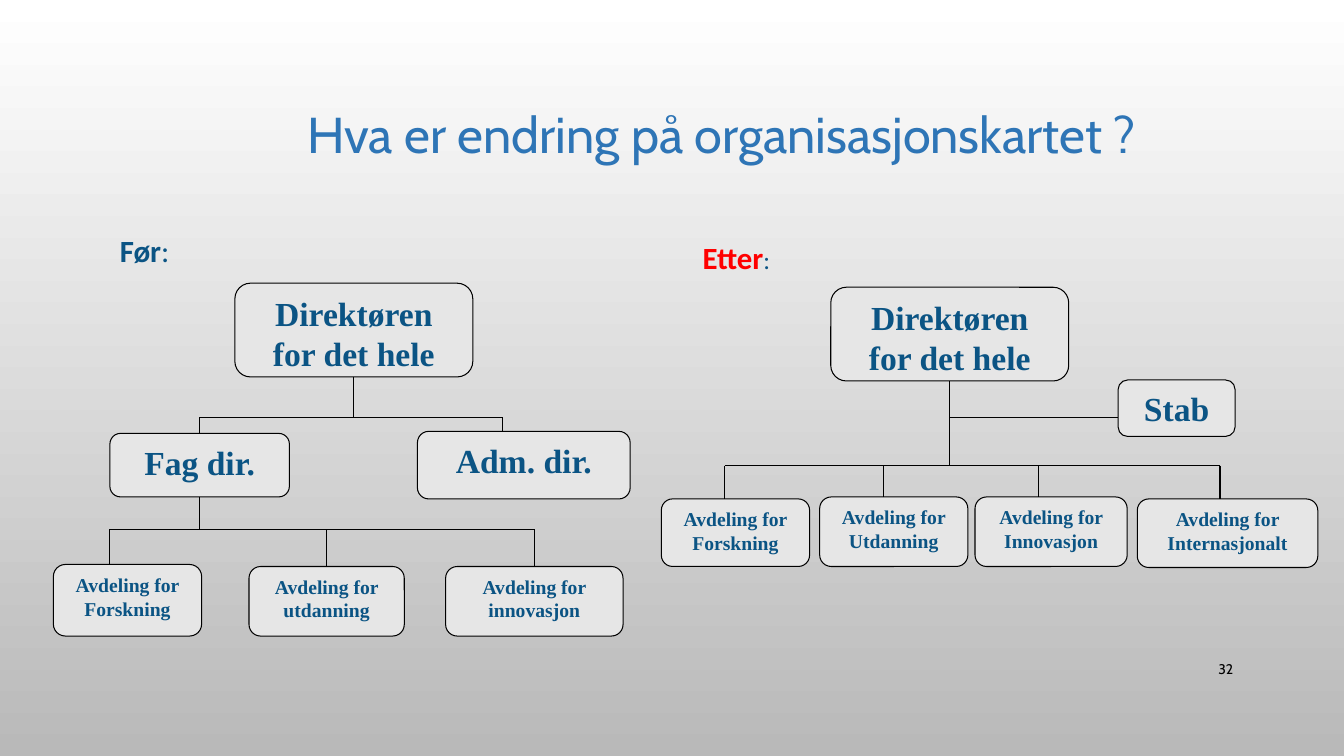
"""Build a slide that compares an organisation chart before and after a change."""
from lxml import etree
from pptx import Presentation
from pptx import util as u
from pptx.dml.color import RGBColor
from pptx.enum import shapes, text
from pptx.oxml.ns import qn

WHITE = RGBColor(0xFF, 0xFF, 0xFF)
GREY = RGBColor(0xB9, 0xB9, 0xB9)
BOX_GREY = RGBColor(0xE6, 0xE6, 0xE6)
BLACK = RGBColor(0, 0, 0)
TITLE_BLUE = RGBColor(0x2E, 0x75, 0xB6)
NAVY = RGBColor(0x0B, 0x54, 0x84)
RED = RGBColor(0xFF, 0, 0)
LEFT, CENTER, RIGHT = text.PP_ALIGN.LEFT, text.PP_ALIGN.CENTER, text.PP_ALIGN.RIGHT
TOP, MIDDLE = text.MSO_ANCHOR.TOP, text.MSO_ANCHOR.MIDDLE
TOP_SIDE, BOTTOM_SIDE = 0, 2

deck = Presentation()
deck.slide_width, deck.slide_height = u.Inches(13.33), u.Inches(7.5)
page = deck.slides.add_slide(deck.slide_layouts[6])
backdrop = page.background.fill
backdrop.gradient()
backdrop.gradient_angle = 270
for stop, colour, position in zip(backdrop.gradient_stops, (WHITE, GREY), (0, 1)):
    stop.color.rgb = colour
    stop.position = position


def write(box, paragraphs, align, anchor=TOP, wrap=True):
    """Fill a box with paragraphs of (words, size, font, colour, bold) runs."""
    frame = box.text_frame
    frame.word_wrap = wrap
    frame.vertical_anchor = anchor
    for index, runs in enumerate(paragraphs):
        para = frame.add_paragraph() if index else frame.paragraphs[0]
        para.alignment = align
        for words, size, font, colour, bold in runs:
            span = para.add_run()
            span.text = words
            span.font.size = u.Pt(size)
            span.font.name = font
            span.font.color.rgb = colour
            span.font.bold = bold


def connect(x1, y1, x2, y2):
    """Draw a thin black line and return it."""
    line = page.shapes.add_connector(
        shapes.MSO_CONNECTOR.STRAIGHT, *map(u.Inches, (x1, y1, x2, y2)))
    line.line.color.rgb = BLACK
    line.line.width = u.Pt(0.75)
    etree.SubElement(line._element.spPr, qn("a:effectLst"))
    return line


director = ["Direktøren", "for det hele"]
units = [
    ("director before", 2.33, 2.81, 2.36, 0.93, 24, director),
    ("professional", 1.09, 4.3, 1.78, 0.63, 24, ["Fag dir."]),
    ("administrative", 4.14, 4.28, 2.11, 0.67, 24, ["Adm. dir."]),
    ("research before", 0.53, 5.6, 1.47, 0.71, 14, ["Avdeling for Forskning"]),
    ("education before", 2.47, 5.62, 1.54, 0.69, 14, ["Avdeling for utdanning"]),
    ("innovation before", 4.42, 5.62, 1.76, 0.69, 14, ["Avdeling for innovasjon"]),
    ("director after", 8.24, 2.85, 2.36, 0.93, 24, director),
    ("staff", 11.09, 3.77, 1.16, 0.56, 24, ["Stab"]),
    ("research after", 6.56, 4.95, 1.47, 0.67, 14, ["Avdeling for Forskning"]),
    ("education after", 8.13, 4.93, 1.47, 0.69, 14, ["Avdeling for Utdanning"]),
    ("innovation after", 9.67, 4.93, 1.51, 0.69, 14, ["Avdeling for Innovasjon"]),
    ("international", 11.28, 4.95, 1.79, 0.68, 14, ["Avdeling for Internasjonalt"]),
]
boxes = {}
for unit, x, y, width, height, size, lines in units:
    box = page.shapes.add_shape(
        shapes.MSO_SHAPE.ROUNDED_RECTANGLE, *map(u.Inches, (x, y, width, height)))
    box.shadow.inherit = False
    box.fill.solid()
    box.fill.fore_color.rgb = BOX_GREY
    box.line.color.rgb = BLACK
    box.line.width = u.Pt(0.75)
    write(box, [[(words, size, "Times New Roman", NAVY, True)] for words in lines], CENTER)
    boxes[unit] = box

for unit, x, top, bottom in [
    ("director before", 3.51, 3.74, 4.14),
    ("professional", 1.98, 4.93, 5.25),
    ("director after", 9.42, 3.78, 4.62),
]:
    connect(x, top, x, bottom).begin_connect(boxes[unit], BOTTOM_SIDE)

for unit, x, top, bottom in [
    ("professional", 1.98, 4.14, 4.3),
    ("education before", 3.24, 5.25, 5.62),
    ("innovation before", 5.3, 5.25, 5.62),
]:
    connect(x, top, x, bottom).end_connect(boxes[unit], TOP_SIDE)

for x, top, bottom in [
    (4.98, 4.14, 4.28), (1.09, 5.25, 5.6), (7.19, 4.62, 4.95),
    (8.76, 4.62, 4.93), (10.3, 4.62, 4.93), (12.1, 4.62, 4.95),
]:
    connect(x, top, x, bottom)

for left, right, y in [
    (1.98, 4.98, 4.14), (1.09, 5.3, 5.25), (9.42, 11.09, 4.14), (7.19, 12.1, 4.62),
]:
    connect(left, y, right, y)

for x, y, width, height, runs, align, anchor, wrap in [
    (1, 0.99, 12.31, 0.67,
     [("Hva er endring på organisasjonskartet ?", 36, "Cabin", TITLE_BLUE, False)],
     CENTER, MIDDLE, True),
    (1.09, 2.25, 0.7, 0.47,
     [("Før", 22, "Calibri", NAVY, True), (":", 22, "Calibri", NAVY, False)],
     LEFT, TOP, False),
    (6.87, 2.32, 0.89, 0.47,
     [("Etter", 22, "Calibri", RED, True), (":", 18, "Calibri", NAVY, False)],
     LEFT, TOP, False),
    (11.49, 6.44, 0.84, 0.4, [("32", 10, "Cabin", BLACK, False)], RIGHT, MIDDLE, True),
]:
    label = page.shapes.add_textbox(*map(u.Inches, (x, y, width, height)))
    write(label, [runs], align, anchor, wrap)

deck.save("out.pptx")
